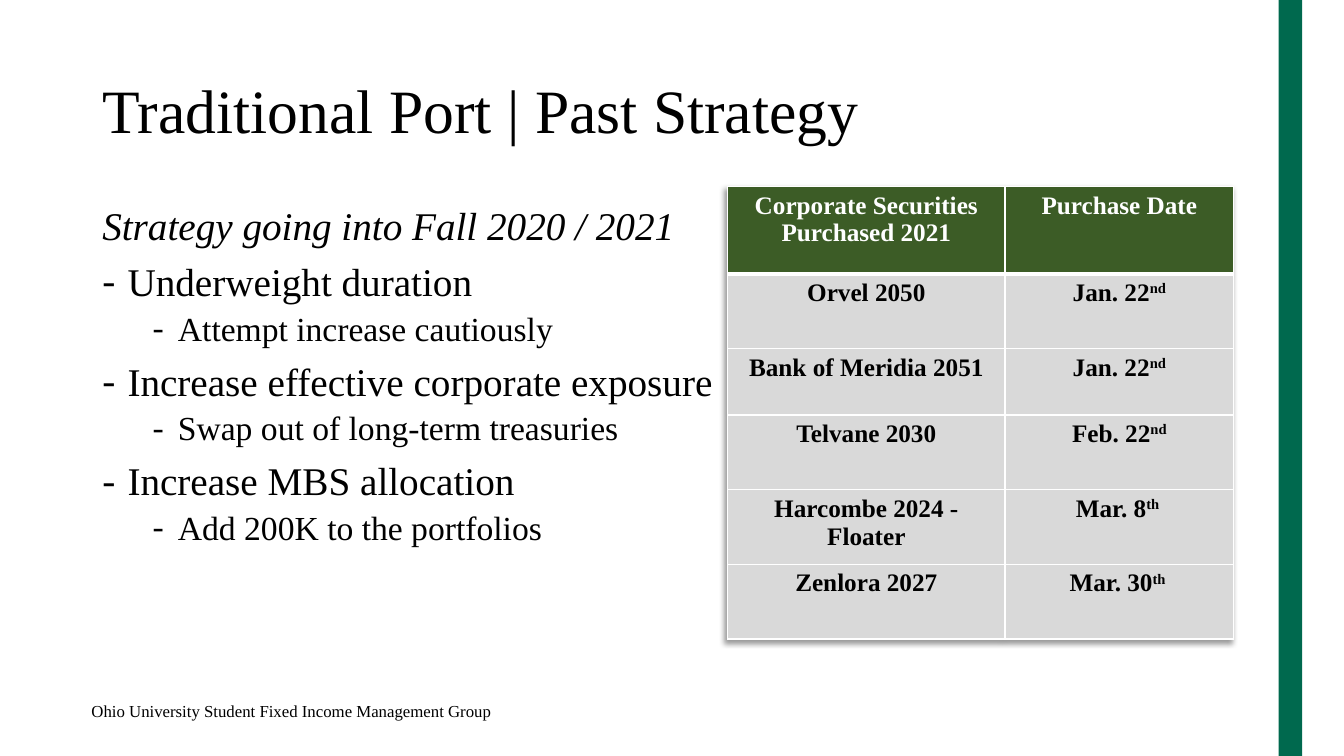
import dataclasses
import typing

import lxml.etree
import pptx
import pptx.dml.color
import pptx.enum.shapes
import pptx.enum.text
import pptx.oxml
import pptx.oxml.ns
import pptx.util

RGB = pptx.dml.color.RGBColor
Pt = pptx.util.Pt
PP_ALIGN = pptx.enum.text.PP_ALIGN
ANCHOR = pptx.enum.text.MSO_ANCHOR
AUTO_SIZE = pptx.enum.text.MSO_AUTO_SIZE
qn = pptx.oxml.ns.qn
DRAWING_NAMESPACE = pptx.oxml.ns.nsdecls("a")

SLIDE_WIDTH = pptx.util.Inches(13.33)
SLIDE_HEIGHT = pptx.util.Inches(7.5)
GRID_COLUMNS, GRID_ROWS = 160, 90


@dataclasses.dataclass(frozen=True)
class Theme:
    font: str = "Times New Roman"
    ink: str = "000000"
    paper: str = "FFFFFF"
    bar: str = "00694E"
    header: str = "3C5C26"
    cell: str = "D9D9D9"
    title_size: int = 44
    body_size: int = 28
    detail_size: int = 24
    table_size: int = 18
    footer_size: int = 12


THEME = Theme()


@dataclasses.dataclass(frozen=True)
class Area:
    """A rectangle in grid columns and rows."""
    column: float
    row: float
    columns: float
    rows: float

    def lengths(self) -> tuple[int, int, int, int]:
        return (across(self.column), down(self.row),
                across(self.columns), down(self.rows))


@dataclasses.dataclass(frozen=True)
class Point:
    text: str
    level: int = 0
    heading: bool = False


@dataclasses.dataclass(frozen=True)
class Purchase:
    security: str
    day: str
    suffix: str


TITLE_AREA = Area(11, 4.8, 138, 17.4)
BODY_AREA = Area(11, 24, 79.4, 57.1)
TABLE_AREA = Area(86.64, 22.2, 60.24, 53.8)
BAR_AREA = Area(152.2, 0, 2.8, GRID_ROWS)
FOOTER_AREA = Area(9.7, 82.8, 80, 3.6)
TABLE_COLUMNS = (33, 27.24)
TABLE_ROWS = (10.4, 8.9, 7.9, 8.9, 8.9, 8.9)
BULLET_INDENT = 3
LEVEL_STEP = 6

POINTS = (
    Point("Strategy going into Fall 2020 / 2021", heading=True),
    Point("Underweight duration"),
    Point("Attempt increase cautiously", 1),
    Point("Increase effective corporate exposure"),
    Point("Swap out of long-term treasuries", 1),
    Point("Increase MBS allocation"),
    Point("Add 200K to the portfolios", 1),
)
HEADERS = ("Corporate Securities Purchased 2021", "Purchase Date")
PURCHASES = (
    Purchase("Orvel 2050", "Jan. 22", "nd"),
    Purchase("Bank of Meridia 2051", "Jan. 22", "nd"),
    Purchase("Telvane 2030", "Feb. 22", "nd"),
    Purchase("Harcombe 2024 - Floater", "Mar. 8", "th "),
    Purchase("Zenlora 2027", "Mar. 30", "th "),
)


def across(columns: float) -> int:
    return round(SLIDE_WIDTH * columns / GRID_COLUMNS)


def down(rows: float) -> int:
    return round(SLIDE_HEIGHT * rows / GRID_ROWS)


def apply_format(target: typing.Any, values: dict[str, typing.Any]) -> None:
    for name, value in values.items():
        setattr(target, name, value)


def add_run(paragraph: typing.Any, text: str, size: int, color: str = THEME.ink,
            bold: bool = False, italic: bool = False, raised: bool = False) -> None:
    run = paragraph.add_run()
    run.text = text
    apply_format(run.font, {"name": THEME.font, "size": Pt(size),
                            "bold": bold, "italic": italic})
    run.font.color.rgb = RGB.from_string(color)
    if raised:
        run._r.get_or_add_rPr().set("baseline", "30000")


def add_title(slide: typing.Any, text: str) -> None:
    title = slide.shapes.title
    apply_format(title, dict(zip(("left", "top", "width", "height"),
                                 TITLE_AREA.lengths())))
    apply_format(title.text_frame, {"vertical_anchor": ANCHOR.MIDDLE, "word_wrap": True,
                                    "auto_size": AUTO_SIZE.NONE})
    paragraph = title.text_frame.paragraphs[0]
    apply_format(paragraph, {"alignment": PP_ALIGN.LEFT, "line_spacing": 0.9})
    add_run(paragraph, text, THEME.title_size)


def add_text_frame(slide: typing.Any, area: Area) -> typing.Any:
    frame = slide.shapes.add_textbox(*area.lengths()).text_frame
    frame.word_wrap = True
    return frame


def add_dash(paragraph: typing.Any, level: int) -> None:
    """Give the paragraph a hanging dash, indented by its level."""
    properties = paragraph._p.get_or_add_pPr()
    properties.set("marL", str(across(BULLET_INDENT + LEVEL_STEP * level)))
    properties.set("indent", str(-across(BULLET_INDENT)))
    lxml.etree.SubElement(properties, qn("a:buFont")).set("typeface", THEME.font)
    lxml.etree.SubElement(properties, qn("a:buChar")).set("char", "-")


def add_points(slide: typing.Any, points: tuple[Point, ...]) -> None:
    frame = add_text_frame(slide, BODY_AREA)
    for index, point in enumerate(points):
        paragraph = frame.add_paragraph() if index else frame.paragraphs[0]
        space = (5 if point.level else 10) if index else 0
        apply_format(paragraph, {"level": point.level, "line_spacing": 0.9,
                                 "space_before": Pt(space)})
        if not point.heading:
            add_dash(paragraph, point.level)
        size = THEME.detail_size if point.level else THEME.body_size
        add_run(paragraph, point.text, size, italic=point.heading)


def add_borders(cell: typing.Any, widths: dict[str, int]) -> None:
    properties = cell._tc.get_or_add_tcPr()
    for index, (side, width) in enumerate(widths.items()):
        line = pptx.oxml.parse_xml(
            f'<a:ln{side} {DRAWING_NAMESPACE} w="{int(Pt(width))}">'
            f'<a:solidFill><a:srgbClr val="{THEME.paper}"/></a:solidFill></a:ln{side}>')
        properties.insert(index, line)


def add_table_shadow(table: typing.Any) -> None:
    shadow = pptx.oxml.parse_xml(
        f'<a:effectLst {DRAWING_NAMESPACE}>'
        '<a:outerShdw blurRad="50800" dist="38100" dir="8100000" algn="tr" rotWithShape="0">'
        '<a:prstClr val="black"><a:alpha val="40000"/></a:prstClr>'
        '</a:outerShdw></a:effectLst>')
    table._tbl.tblPr.insert(0, shadow)


def add_purchase_table(slide: typing.Any) -> None:
    content = [[(header, "") for header in HEADERS]]
    content += [[(item.security, ""), (item.day, item.suffix)] for item in PURCHASES]
    table = slide.shapes.add_table(len(TABLE_ROWS), len(TABLE_COLUMNS),
                                   *TABLE_AREA.lengths()).table
    for column, width in zip(table.columns, TABLE_COLUMNS):
        column.width = across(width)
    for row_index, (row, height) in enumerate(zip(table.rows, TABLE_ROWS)):
        row.height = down(height)
        is_header = row_index == 0
        color = THEME.paper if is_header else THEME.ink
        widths = {"L": 1, "R": 1, "T": 3 if row_index == 1 else 1,
                  "B": 3 if is_header else 1}
        for cell, (text, suffix) in zip(row.cells, content[row_index]):
            cell.fill.solid()
            cell.fill.fore_color.rgb = RGB.from_string(
                THEME.header if is_header else THEME.cell)
            add_borders(cell, widths)
            paragraph = cell.text_frame.paragraphs[0]
            paragraph.alignment = PP_ALIGN.CENTER
            add_run(paragraph, text, THEME.table_size, color, bold=True)
            if suffix:
                add_run(paragraph, suffix, THEME.table_size, color, bold=True, raised=True)
    add_table_shadow(table)


def add_side_bar(slide: typing.Any) -> None:
    bar = slide.shapes.add_shape(pptx.enum.shapes.MSO_SHAPE.RECTANGLE, *BAR_AREA.lengths())
    bar.shadow.inherit = False
    bar.fill.solid()
    bar.fill.fore_color.rgb = RGB.from_string(THEME.bar)
    bar.line.fill.background()


def main() -> None:
    presentation = pptx.Presentation()
    apply_format(presentation, {"slide_width": SLIDE_WIDTH, "slide_height": SLIDE_HEIGHT})
    slide = presentation.slides.add_slide(presentation.slide_layouts.get_by_name("Title Only"))
    footer = add_text_frame(slide, FOOTER_AREA)
    add_run(footer.paragraphs[0], "Ohio University Student Fixed Income Management Group",
            THEME.footer_size)
    add_side_bar(slide)
    add_title(slide, "Traditional Port | Past Strategy")
    add_points(slide, POINTS)
    add_purchase_table(slide)
    presentation.save("out.pptx")


if __name__ == "__main__":
    main()
